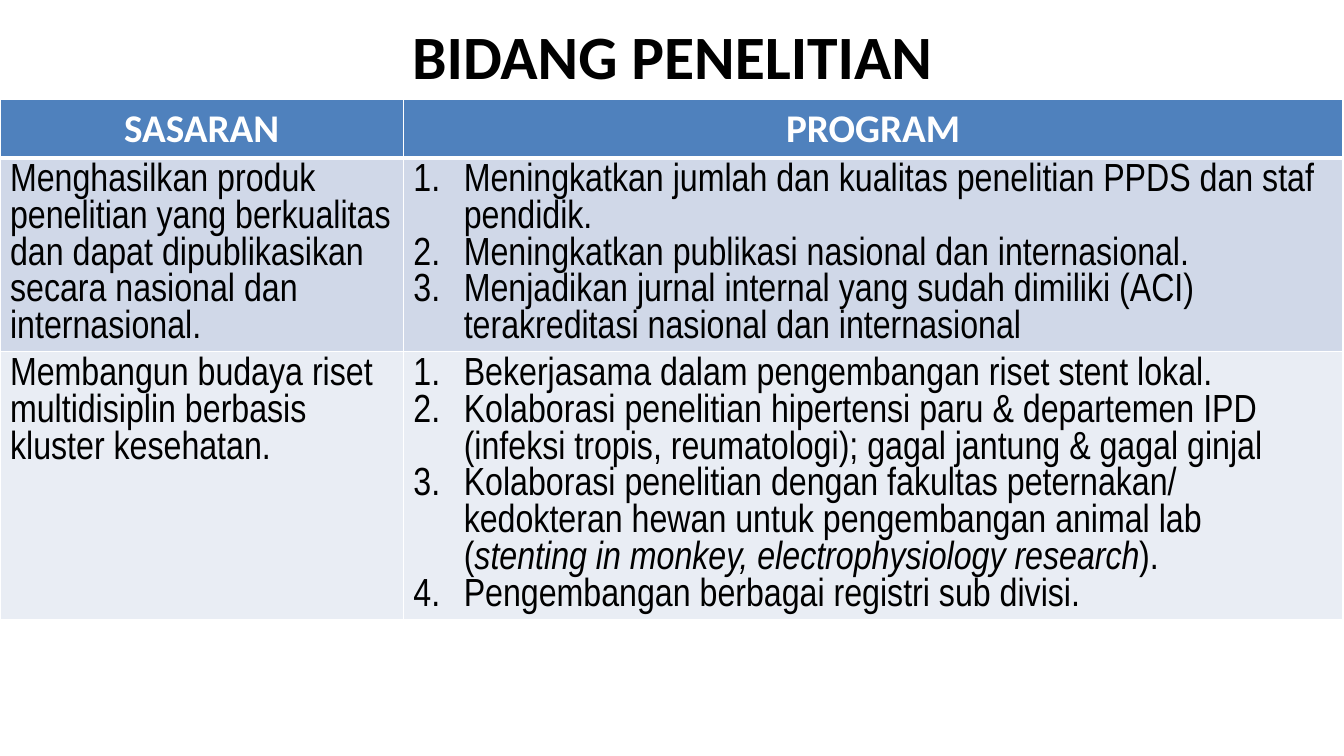
from dataclasses import dataclass
from pptx import Presentation
from pptx.dml.color import RGBColor
from pptx.enum.text import MSO_ANCHOR, PP_ALIGN
from pptx.oxml.ns import qn
from pptx.util import Inches, Pt
from lxml.etree import SubElement

# Content: asterisks enclose italic words
TITLE = "BIDANG PENELITIAN"
HEADS = ["SASARAN", "PROGRAM"]
ROWS = [
    ("Menghasilkan produk penelitian yang berkualitas dan dapat "
     "dipublikasikan secara nasional dan internasional.",
     ["Meningkatkan jumlah dan kualitas penelitian PPDS dan staf pendidik.",
      "Meningkatkan publikasi nasional dan internasional.",
      "Menjadikan jurnal internal yang sudah dimiliki (ACI) terakreditasi "
      "nasional dan internasional"]),
    ("Membangun budaya riset multidisiplin berbasis kluster kesehatan.",
     ["Bekerjasama dalam pengembangan riset stent lokal.",
      "Kolaborasi penelitian hipertensi paru & departemen IPD (infeksi "
      "tropis, reumatologi); gagal jantung & gagal ginjal",
      "Kolaborasi penelitian dengan fakultas peternakan/ kedokteran hewan "
      "untuk pengembangan animal lab "
      "(*stenting in monkey, electrophysiology research*).",
      "Pengembangan berbagai registri sub divisi."]),
]
WIDTHS = [4, 9.32]
TOP, HIGH = 0.99, 0.41


@dataclass(frozen=True)
class Theme:
    head_font: str = "Calibri"
    body_font: str = "Arial Narrow"
    title_size: int = 44
    text_size: int = 28
    ink: str = "000000"
    white: str = "FFFFFF"
    head: str = "4F81BD"
    bands: tuple = ("D0D8E8", "E9EDF4")


LOOK = Theme()


def write(frame, text, font=LOOK.body_font, size=LOOK.text_size,
          color=LOOK.ink, bold=False, align=PP_ALIGN.LEFT):
    """Write one string, or a list as numbered paragraphs."""
    listed = isinstance(text, list)
    for n, line in enumerate(text if listed else [text]):
        para = frame.add_paragraph() if n else frame.paragraphs[0]
        para.alignment = align
        if listed:
            props = para._p.get_or_add_pPr()
            props.set("marL", str(Inches(0.5)))
            props.set("indent", str(-Inches(0.5)))
            SubElement(props, qn("a:buFont"), typeface="+mj-lt")
            SubElement(props, qn("a:buAutoNum"), type="arabicPeriod")
        for k, part in enumerate(line.split("*")):
            run = para.add_run()
            run.text = part
            run.font.name, run.font.size = font, Pt(size)
            run.font.bold, run.font.italic = bold, k % 2 == 1
            run.font.color.rgb = RGBColor.from_string(color)


def paint(cell, fill, top=1, base=1):
    """Give a cell white borders and a plain fill."""
    props = cell._tc.get_or_add_tcPr()
    for side, width in zip("LRTB", (1, 1, top, base)):
        edge = SubElement(props, qn(f"a:ln{side}"), w=str(Pt(width)))
        solid = SubElement(edge, qn("a:solidFill"))
        SubElement(solid, qn("a:srgbClr"), val=LOOK.white)
    cell.fill.solid()
    cell.fill.fore_color.rgb = RGBColor.from_string(fill)


def main():
    deck = Presentation()
    deck.slide_width, deck.slide_height = Inches(13.33), Inches(7.5)
    slide = deck.slides.add_slide(deck.slide_layouts[5])

    # Title
    title = slide.shapes.title
    title.left, title.top = Inches(0.67), Inches(0.23)
    title.width, title.height = Inches(12), Inches(0.62)
    title.text_frame.vertical_anchor = MSO_ANCHOR.MIDDLE
    write(title.text_frame, TITLE, font=LOOK.head_font,
          size=LOOK.title_size, bold=True, align=PP_ALIGN.CENTER)

    # Table grid: rows grow to fit their text
    count = len(ROWS) + 1
    table = slide.shapes.add_table(
        count, len(HEADS), 0, Inches(TOP),
        Inches(sum(WIDTHS)), Inches(HIGH * count)).table
    for col, width in zip(table.columns, WIDTHS):
        col.width = Inches(width)

    # Header row
    for c, text in enumerate(HEADS):
        cell = table.cell(0, c)
        paint(cell, LOOK.head, base=3)
        write(cell.text_frame, text, font=LOOK.head_font,
              color=LOOK.white, bold=True, align=PP_ALIGN.CENTER)

    # Goals and their programmes
    for r, row in enumerate(ROWS, 1):
        for c, text in enumerate(row):
            cell = table.cell(r, c)
            paint(cell, LOOK.bands[(r - 1) % 2], top=3 if r == 1 else 1)
            write(cell.text_frame, text)

    deck.save("out.pptx")


if __name__ == "__main__":
    main()
